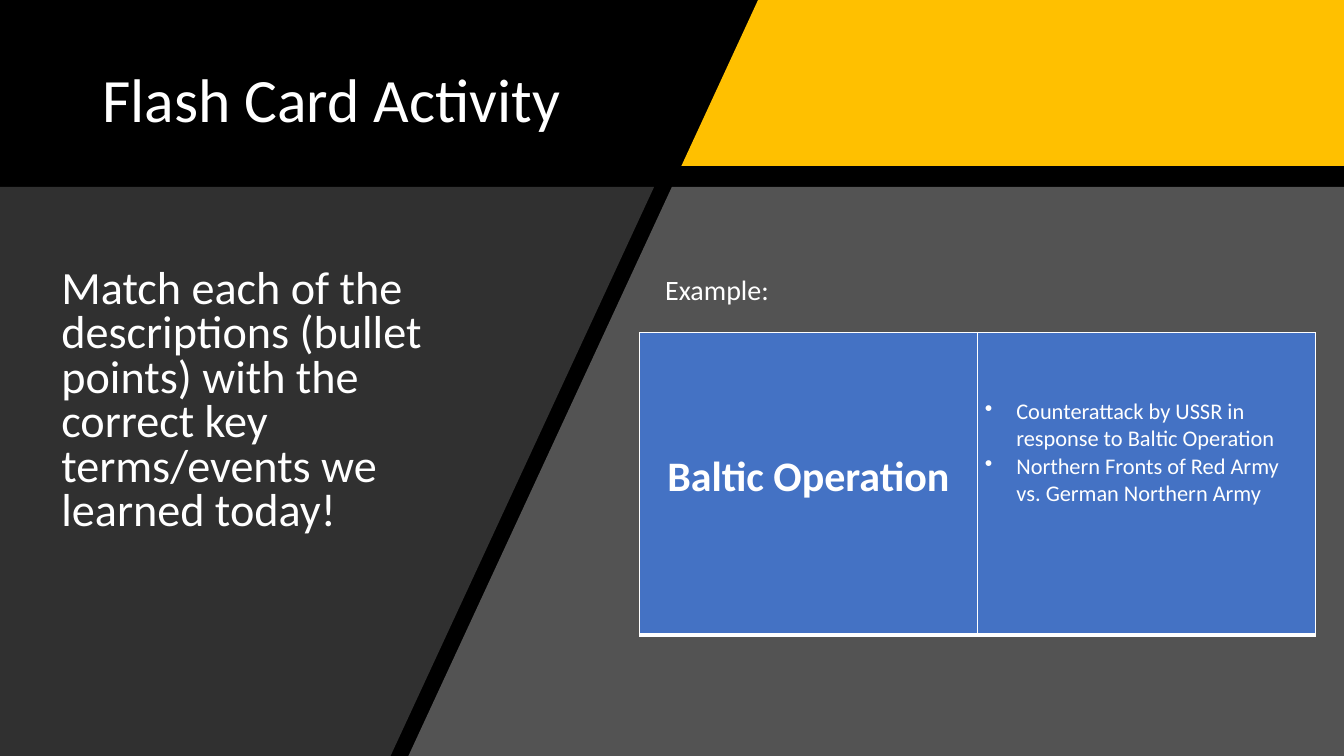
from lxml import etree
from pptx import Presentation
from pptx.dml.color import RGBColor
from pptx.enum.text import MSO_ANCHOR, PP_ALIGN
from pptx.oxml.ns import qn
from pptx.util import Pt

PX = 9525
WIDE, HIGH = 1280, 720
BAND = 178
FONT = "Calibri"
BLACK = RGBColor(0x00, 0x00, 0x00)
WHITE = RGBColor(0xFF, 0xFF, 0xFF)
GOLD = RGBColor(0xFF, 0xC0, 0x00)
GRAY = RGBColor(0xA6, 0xA6, 0xA6)
DARK = RGBColor(0x30, 0x30, 0x30)
BLUE = RGBColor(0x44, 0x72, 0xC4)
TOP, MIDDLE = MSO_ANCHOR.TOP, MSO_ANCHOR.MIDDLE
LEFT, CENTER = PP_ALIGN.LEFT, PP_ALIGN.CENTER


class Board:
    """Draws styled elements on one slide, with lengths in px."""

    def __init__(self, deck):
        self.slide = deck.slides.add_slide(deck.slide_layouts[6])
        fill = self.slide.background.fill
        fill.solid()
        fill.fore_color.rgb = BLACK

    def panel(self, points, color, alpha=None):
        pen = self.slide.shapes.build_freeform(*points[0], scale=PX)
        pen.add_line_segments(points[1:], close=True)
        shape = pen.convert_to_shape()
        shape.shadow.inherit = False
        shape.fill.solid()
        shape.fill.fore_color.rgb = color
        shape.line.fill.background()
        if alpha:
            tint = shape._element.spPr.find(qn("a:solidFill"))[0]
            etree.SubElement(tint, qn("a:alpha"), val=str(alpha * 1000))

    def style(self, para, text, size, bold=False, align=LEFT):
        para.text = text
        para.alignment = align
        font = para.font
        font.name, font.size, font.bold = FONT, Pt(size), bold
        font.color.rgb = WHITE

    def text(self, box, text, size, anchor=TOP, lead=1.0):
        shape = self.slide.shapes.add_textbox(*(n * PX for n in box))
        frame = shape.text_frame
        frame.word_wrap = True
        frame.vertical_anchor = anchor
        para = frame.paragraphs[0]
        self.style(para, text, size)
        para.line_spacing = lead

    def bullet(self, para, indent):
        props = para._p.get_or_add_pPr()
        props.set("marL", str(indent * PX))
        props.set("indent", str(-indent * PX))
        mark = etree.Element(qn("a:buChar"), char="•")
        props.insert(0, mark)

    def border(self, cell):
        props = cell._tc.get_or_add_tcPr()
        for spot, (side, width) in enumerate(zip("LRTB", (1, 1, 1, 3))):
            line = etree.Element(qn(f"a:ln{side}"), w=str(Pt(width)))
            fill = etree.SubElement(line, qn("a:solidFill"))
            etree.SubElement(fill, qn("a:srgbClr"), val=str(WHITE))
            props.insert(spot, line)

    def cell(self, cell, top, lines, size, bold=False, align=LEFT, indent=0):
        cell.fill.solid()
        cell.fill.fore_color.rgb = BLUE
        cell.margin_left = cell.margin_right = cell.margin_bottom = 7 * PX
        cell.margin_top = top * PX
        frame = cell.text_frame
        for spot, line in enumerate(lines):
            para = frame.add_paragraph() if spot else frame.paragraphs[0]
            self.style(para, line, size, bold, align)
            if indent:
                self.bullet(para, indent)
        self.border(cell)

    def card(self, box, term, facts):
        frame = self.slide.shapes.add_table(1, 2, *(n * PX for n in box))
        table = frame.table
        table.first_row = table.horz_banding = False
        self.cell(table.cell(0, 0), 113, [term], 30, True, CENTER)
        self.cell(table.cell(0, 1), 62, facts, 16, indent=30)


def main():
    deck = Presentation()
    deck.slide_width, deck.slide_height = WIDE * PX, HIGH * PX
    board = Board(deck)
    board.panel([(722, 0), (WIDE, 0), (WIDE, 158), (649, 158)], GOLD)
    board.panel([(640, BAND), (WIDE, BAND), (WIDE, HIGH), (389, HIGH)], GRAY, 50)
    board.panel([(0, BAND), (623, BAND), (372, HIGH), (0, HIGH)], DARK)
    board.text((88, 38, 561, 120), "Flash Card Activity", 44, MIDDLE, 0.9)
    board.text(
        (49, 240, 378, 286),
        "Match each of the descriptions (bullet points) with the correct "
        "key terms/events we learned today!",
        33, MIDDLE, 0.8,
    )
    board.card(
        (609, 317, 644, 288),
        "Baltic Operation",
        [
            "Counterattack by USSR in response to Baltic Operation",
            "Northern Fronts of Red Army vs. German Northern Army",
        ],
    )
    board.text((624, 255, 312, 42), "Example:", 20)
    deck.save("out.pptx")


if __name__ == "__main__":
    main()
